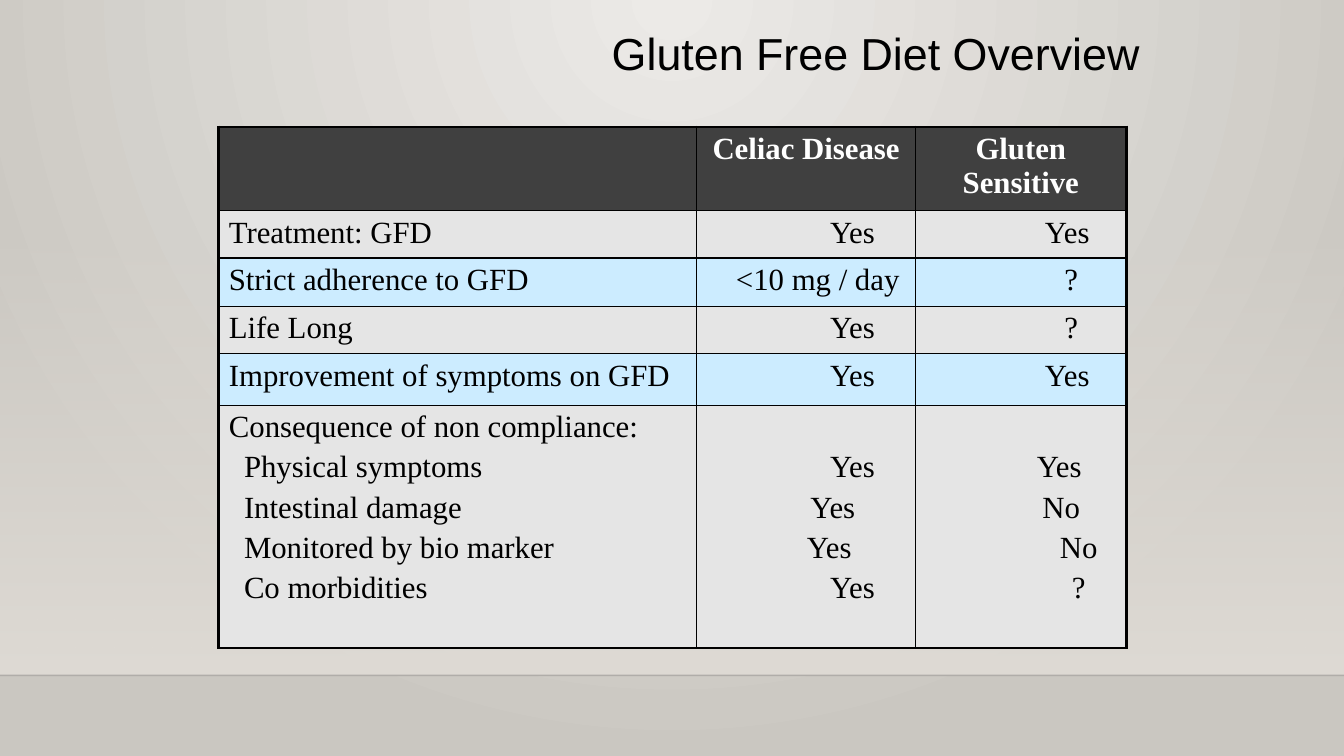
from dataclasses import dataclass

from lxml.etree import SubElement
from pptx import Presentation
from pptx.dml.color import RGBColor as Rgb
from pptx.enum.shapes import MSO_CONNECTOR as Connector, MSO_SHAPE as Shape
from pptx.enum.text import MSO_ANCHOR as Anchor, MSO_AUTO_SIZE as AutoSize, PP_ALIGN as Align
from pptx.oxml.ns import qn
from pptx.util import Inches, Pt

TITLE = "Gluten Free Diet Overview"
HEADINGS = ["", "Celiac Disease", "Gluten Sensitive"]
YES = ("Yes", 0.92)
UNKNOWN = ("?", 1)
COMPARISON = [
    ("Treatment: GFD", YES, YES),
    ("Strict adherence to GFD", ("<10 mg / day", 0.23), UNKNOWN),
    ("Life Long", YES, UNKNOWN),
    ("Improvement of symptoms on GFD", YES, YES),
]
CONSEQUENCE_HEADING = "Consequence of non compliance:"
CONSEQUENCES = [
    ("Physical symptoms", YES, ("Yes", 0.76)),
    ("Intestinal damage", ("Yes", 0.53), ("No", 0.8)),
    ("Monitored by bio marker", ("Yes", 0.46), ("No", 1.15)),
    ("Co morbidities", YES, ("?", 1.15)),
]
COLUMN_WIDTHS = [4.74, 2.17, 2.09]
ROW_HEIGHTS = [0.83, 0.47, 0.48, 0.47, 0.51, 2.41]
TABLE_LEFT, TABLE_TOP = 2.17, 1.26
SLIDE_WIDTH, SLIDE_HEIGHT = 13.33, 7.5
BAND_TOP, HORIZON = 2.21, 6.7
CONSEQUENCE_INDENT = 0.15
CELL_TOP, LINE_PITCH = 0.05, 0.4


@dataclass(frozen=True)
class Theme:
    title_font: str = "Arial"
    table_font: str = "Times New Roman"
    title_size: float = 32
    table_size: float = 22
    paragraph_gap: float = 4.4
    outer_border: float = 2.25
    inner_border: float = 1
    text: str = "000000"
    heading_text: str = "FFFFFF"
    heading_fill: str = "404040"
    plain_row: str = "E5E5E5"
    tinted_row: str = "CCECFF"
    glow: str = "ECEAE7"
    wall: str = "CAC7C1"
    band: str = "DFDBD5"
    horizon: str = "000001"


THEME = Theme()


def set_alpha(parent, percent):
    color = next(parent.iter(qn("a:srgbClr")))
    SubElement(color, qn("a:alpha"), val=str(percent * 1000))


def set_gradient(fill, start, end):
    fill.gradient()
    for stop, color in zip(fill.gradient_stops, (start, end)):
        stop.color.rgb = Rgb.from_string(color)


def paint_background(slide):
    set_gradient(slide.background.fill, THEME.glow, THEME.wall)
    gradient = next(slide._element.iter(qn("a:gradFill")))
    gradient.remove(gradient.find(qn("a:lin")))
    circle = SubElement(gradient, qn("a:path"), path="circle")
    SubElement(circle, qn("a:fillToRect"), l="43000", t="0", r="43000", b="100000")

    band = slide.shapes.add_shape(
        Shape.RECTANGLE, 0, Inches(BAND_TOP), Inches(SLIDE_WIDTH), Inches(HORIZON - BAND_TOP))
    band.shadow.inherit = False
    band.line.fill.background()
    set_gradient(band.fill, THEME.band, THEME.band)
    band.fill.gradient_angle = 270
    set_alpha(band._element.spPr, 0)

    horizon = slide.shapes.add_connector(
        Connector.STRAIGHT, 0, Inches(HORIZON), Inches(SLIDE_WIDTH), Inches(HORIZON))
    horizon.line.color.rgb = Rgb.from_string(THEME.horizon)
    horizon.line.width = Pt(1)
    set_alpha(horizon._element.spPr, 20)
    SubElement(horizon._element.spPr, qn("a:effectLst"))


def write_title(slide):
    title = slide.shapes.title
    title.left, title.top = Inches(2.33), Inches(0.21)
    title.width, title.height = Inches(9.08), Inches(1.42)
    frame = title.text_frame
    frame.text = TITLE
    frame.auto_size = AutoSize.NONE
    frame.vertical_anchor = Anchor.TOP
    heading = frame.paragraphs[0]
    heading.alignment = Align.RIGHT
    heading.font.name = THEME.title_font
    heading.font.size = Pt(THEME.title_size)
    heading.font.color.rgb = Rgb.from_string(THEME.text)


def draw_borders(cell, row, column):
    last_row, last_column = len(ROW_HEIGHTS) - 1, len(COLUMN_WIDTHS) - 1
    outer_sides = {"L": column == 0, "R": column == last_column,
                   "T": row == 0, "B": row == last_row}
    properties = cell._tc.get_or_add_tcPr()
    for side, outer in outer_sides.items():
        width = THEME.outer_border if outer else THEME.inner_border
        border = SubElement(properties, qn(f"a:ln{side}"), w=str(Pt(width)))
        SubElement(SubElement(border, qn("a:solidFill")), qn("a:srgbClr"), val=THEME.text)


def write_cell(cell, entries, alignment, color, bold):
    frame = cell.text_frame
    for number, (text, indent) in enumerate(entries):
        paragraph = frame.add_paragraph() if number else frame.paragraphs[0]
        paragraph.text = text
        paragraph.alignment = alignment
        if number:
            paragraph.space_before = Pt(THEME.paragraph_gap)
        if indent:
            properties = paragraph._p.get_or_add_pPr()
            properties.set("marL", str(Inches(indent)))
            properties.set("indent", "0")
        paragraph.font.name = THEME.table_font
        paragraph.font.size = Pt(THEME.table_size)
        paragraph.font.bold = bold
        paragraph.font.color.rgb = Rgb.from_string(color)


def table_rows():
    headings = [[(heading, 0)] for heading in HEADINGS]
    comparison = [[[(topic, 0)], [celiac], [sensitive]] for topic, celiac, sensitive in COMPARISON]
    topics, celiac, sensitive = zip(*CONSEQUENCES)
    listed = [(CONSEQUENCE_HEADING, 0)] + [(topic, CONSEQUENCE_INDENT) for topic in topics]
    return [headings, *comparison, [listed, celiac, sensitive]]


def build_table(slide):
    rows = table_rows()
    table = slide.shapes.add_table(
        len(rows), len(COLUMN_WIDTHS), Inches(TABLE_LEFT), Inches(TABLE_TOP),
        Inches(sum(COLUMN_WIDTHS)), Inches(sum(ROW_HEIGHTS))).table
    table.first_row = table.horz_banding = False
    for column, width in zip(table.columns, COLUMN_WIDTHS):
        column.width = Inches(width)
    for r, (row, height) in enumerate(zip(rows, ROW_HEIGHTS)):
        table.rows[r].height = Inches(height)
        is_heading = r == 0
        row_fill = THEME.plain_row if r % 2 else THEME.tinted_row
        for c, entries in enumerate(row):
            cell = table.cell(r, c)
            draw_borders(cell, r, c)
            cell.fill.solid()
            cell.fill.fore_color.rgb = Rgb.from_string(THEME.heading_fill if is_heading else row_fill)
            beside_list = r == len(rows) - 1 and c > 0
            cell.margin_top = Inches(CELL_TOP + LINE_PITCH * beside_list)
            write_cell(cell, entries, Align.CENTER if c else Align.LEFT,
                       THEME.heading_text if is_heading else THEME.text, is_heading)


def main():
    deck = Presentation()
    deck.slide_width, deck.slide_height = Inches(SLIDE_WIDTH), Inches(SLIDE_HEIGHT)
    slide = deck.slides.add_slide(deck.slide_layouts[5])
    paint_background(slide)
    write_title(slide)
    build_table(slide)
    deck.save("out.pptx")


if __name__ == "__main__":
    main()
